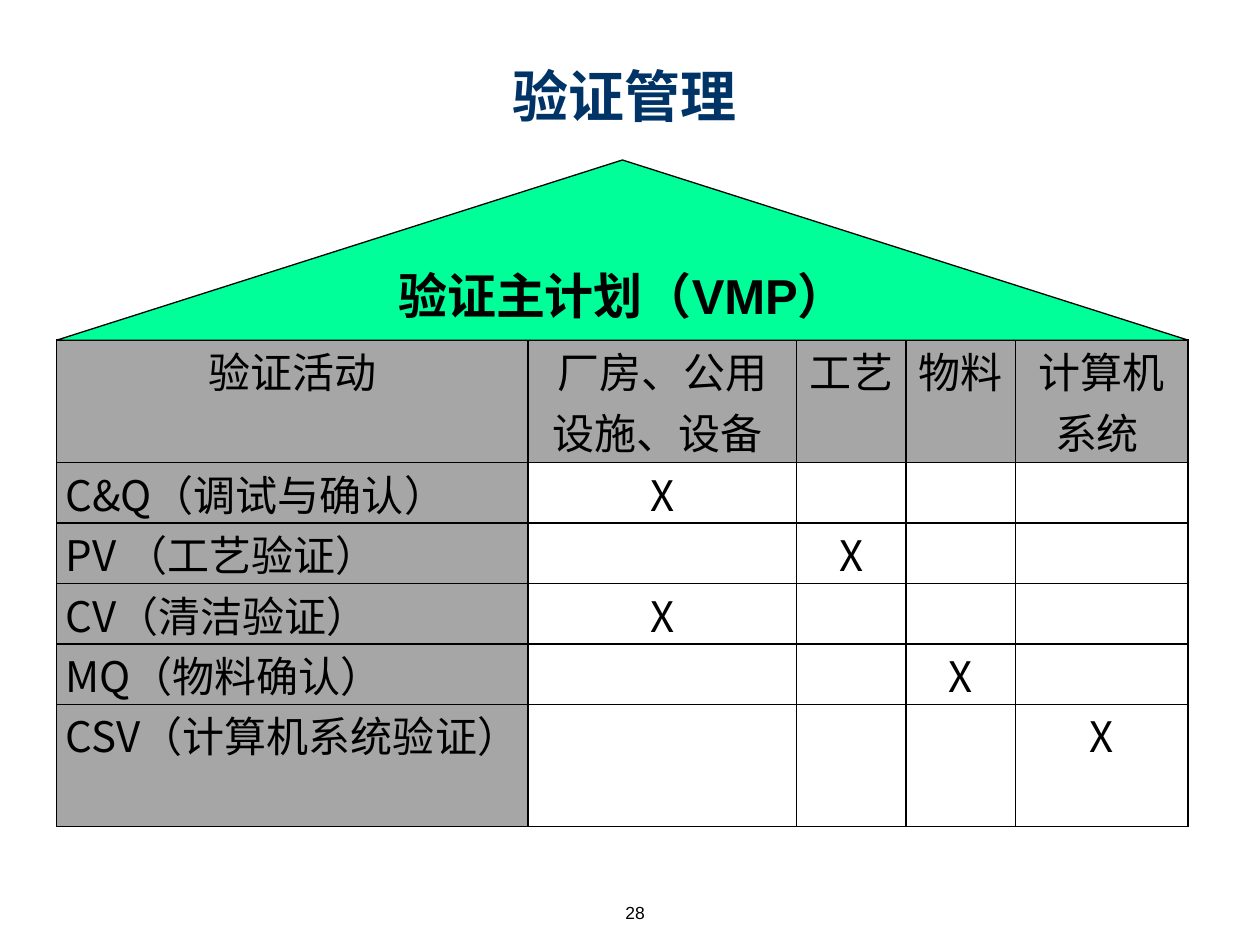
from lxml.etree import SubElement as Sub
from pptx import Presentation
from pptx.dml.color import RGBColor
from pptx.enum.shapes import MSO_SHAPE as Shape
from pptx.enum.text import MSO_ANCHOR as Anchor, PP_ALIGN as Align
from pptx.oxml.ns import qn
from pptx.util import Inches, Pt

BLACK = RGBColor(0x00, 0x00, 0x00)
WHITE = RGBColor(0xFF, 0xFF, 0xFF)
NAVY = RGBColor(0x00, 0x33, 0x66)
GREEN = RGBColor(0x00, 0xFF, 0x99)
GRAY = RGBColor(0xA6, 0xA6, 0xA6)
HAN = "Noto Sans CJK SC"

COLS = [3.74, 2.13, 0.87, 0.87, 1.37]
HEADS = ["验证活动", "厂房、公用设施、设备 ", "工艺 ", "物料 ", "计算机系统 "]
TASKS = [
    ("C&Q（调试与确认）", 1, 0.48),
    ("PV （工艺验证） ", 2, 0.48),
    ("CV（清洁验证） ", 1, 0.48),
    ("MQ（物料确认） ", 3, 0.48),
    ("CSV（计算机系统验证） ", 4, 0.97),
]


def write(frame, text, size, color=BLACK, face="Arial", bold=False, align=Align.CENTER):
    """Put one formatted run into the first paragraph of a frame."""
    para = frame.paragraphs[0]
    para.alignment = align
    run = para.add_run()
    run.text = text
    font = run.font
    font.size, font.bold, font.name = Pt(size), bold, face
    font.color.rgb = color
    Sub(font._element, qn("a:ea"), typeface=HAN)


def add_label(slide, box, text, size, anchor, **style):
    """Add a wrapped text box."""
    frame = slide.shapes.add_textbox(*map(Inches, box)).text_frame
    frame.word_wrap = True
    frame.vertical_anchor = anchor
    write(frame, text, size, **style)


def add_roof(slide, box):
    """Add the triangle that holds the master plan."""
    roof = slide.shapes.add_shape(Shape.ISOSCELES_TRIANGLE, *map(Inches, box))
    roof.shadow.inherit = False
    roof.fill.solid()
    roof.fill.fore_color.rgb = GREEN
    roof.line.color.rgb = BLACK
    roof.line.width = Pt(0.75)
    frame = roof.text_frame
    frame.word_wrap = False
    frame.vertical_anchor = Anchor.MIDDLE
    write(frame, "验证主计划（VMP）", 28, bold=True)


def style_cell(cell, color):
    """Set the margins, borders and fill of a cell."""
    cell.margin_left = cell.margin_right = Inches(0.07)
    cell.margin_top = cell.margin_bottom = 0
    props = cell._tc.get_or_add_tcPr()
    for side in ("lnL", "lnR", "lnT", "lnB"):
        line = Sub(props, qn(f"a:{side}"), w=str(Pt(1)))
        Sub(Sub(line, qn("a:solidFill")), qn("a:srgbClr"), val=str(BLACK))
    cell.fill.solid()
    cell.fill.fore_color.rgb = color


def add_grid(slide, box):
    """Add the table of activities against their objects."""
    rows = [HEADS]
    for name, mark, _ in TASKS:
        rows.append([name] + ["X" if col == mark else "" for col in range(1, len(COLS))])
    grid = slide.shapes.add_table(len(rows), len(COLS), *map(Inches, box)).table
    for col, width in zip(grid.columns, COLS):
        col.width = Inches(width)
    for row, height in zip(grid.rows, [0.97] + [task[2] for task in TASKS]):
        row.height = Inches(height)
    for r, texts in enumerate(rows):
        for c, text in enumerate(texts):
            cell = grid.cell(r, c)
            style_cell(cell, GRAY if r == 0 or c == 0 else WHITE)
            if text:
                align = Align.JUSTIFY if r and c == 0 else Align.CENTER
                write(cell.text_frame, text, 24, face=HAN, align=align)


def main():
    """Build the slide and save it."""
    deck = Presentation()
    deck.slide_width, deck.slide_height = Inches(10), Inches(7.5)
    slide = deck.slides.add_slide(deck.slide_layouts[6])
    add_label(slide, (1.08, 0.49, 7.75, 0.53), "验证管理", 32, Anchor.MIDDLE,
              color=NAVY, bold=True)
    add_label(slide, (4.58, 7.11, 0.92, 0.29), "28", 10, Anchor.TOP)
    add_grid(slide, (0.45, 2.7, 8.98, 3.86))
    add_roof(slide, (0.45, 1.27, 8.98, 1.43))
    deck.save("out.pptx")


if __name__ == "__main__":
    main()
